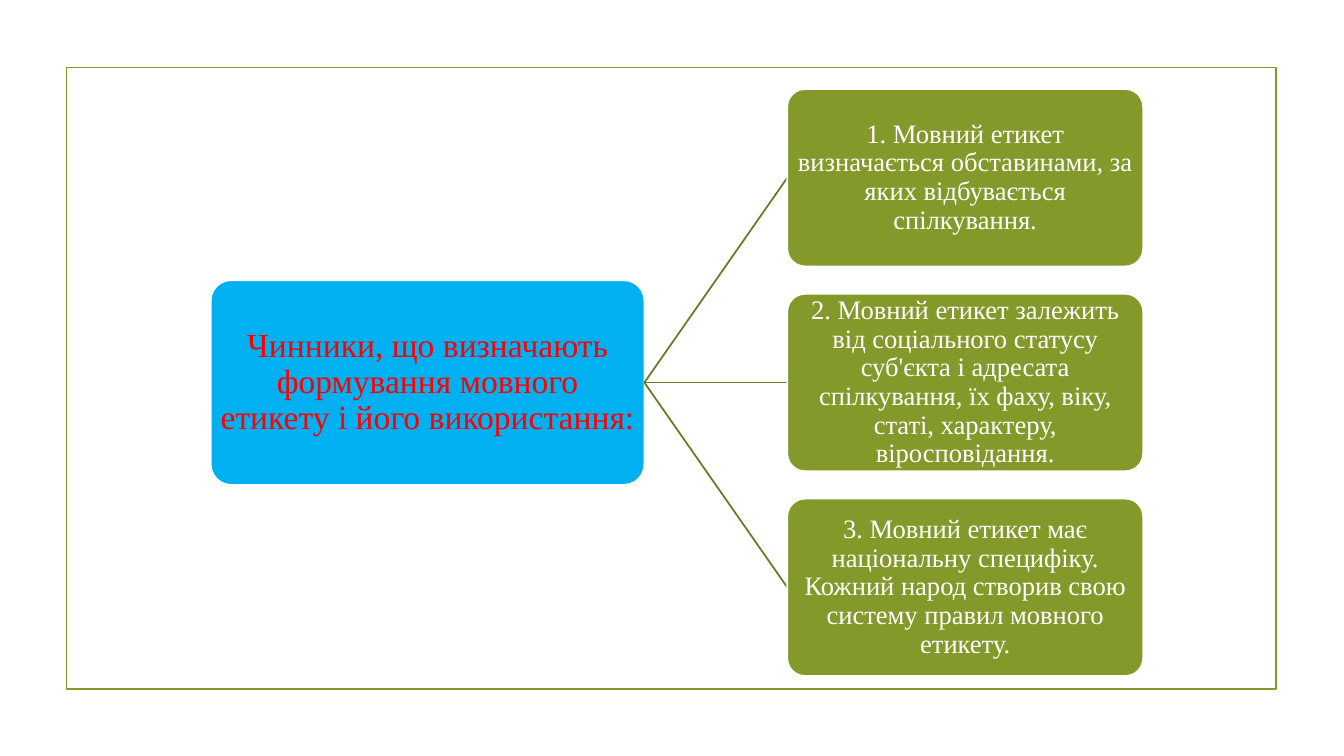
"""Builds a slide with one topic branching into three factors of speech etiquette."""
from lxml.etree import SubElement
from pptx import Presentation
from pptx.dml.color import RGBColor
from pptx.enum.shapes import MSO_CONNECTOR as Connector, MSO_SHAPE as Preset
from pptx.enum.text import MSO_ANCHOR as Anchor, PP_ALIGN as Align
from pptx.oxml.ns import qn
from pptx.util import Cm, Pt

TOPIC = "Чинники, що визначають формування мовного етикету і його використання:"
FACTORS = [
    "1. Мовний етикет визначається обставинами, за яких відбувається спілкування.",
    "2. Мовний етикет залежить від соціального статусу суб'єкта і адресата спілкування, "
    "їх фаху, віку, статі, характеру, віросповідання.",
    "3. Мовний етикет має національну специфіку. Кожний народ створив свою систему "
    "правил мовного етикету.",
]
COLORS = {
    "olive": "83992A",
    "branch": "697B22",
    "blue": "00B0F0",
    "red": "FF0000",
    "white": "FFFFFF",
}
FONT = "Times New Roman"
LINE_WIDTH = Pt(1.25)

FRAME = (1.68, 1.7, 30.48, 15.67)
MIDDLE = 9.64
TOPIC_LEFT, TOPIC_WIDTH, TOPIC_HEIGHT = 5.31, 10.93, 5.16
FACTOR_LEFT, FACTOR_WIDTH, FACTOR_HEIGHT = 19.84, 8.97, 4.47
FACTOR_PITCH = 5.16


def color(name):
    return RGBColor.from_string(COLORS[name])


def style_line(line, name):
    line.color.rgb = color(name)
    line.width = LINE_WIDTH


def add_card(slide, text, left, middle, width, height, fill, ink, size, inset):
    shape = slide.shapes.add_shape(
        Preset.ROUNDED_RECTANGLE, Cm(left), Cm(middle - height / 2), Cm(width), Cm(height)
    )
    shape.adjustments[0] = 0.1
    shape.shadow.inherit = False
    shape.fill.solid()
    shape.fill.fore_color.rgb = color(fill)
    style_line(shape.line, "white")
    frame = shape.text_frame
    frame.word_wrap = True
    frame.vertical_anchor = Anchor.MIDDLE
    frame.margin_left = frame.margin_right = Cm(inset)
    frame.margin_top = frame.margin_bottom = Cm(inset)
    paragraph = frame.paragraphs[0]
    paragraph.text = text
    paragraph.alignment = Align.CENTER
    paragraph.line_spacing = 0.9
    paragraph.font.name = FONT
    paragraph.font.size = Pt(size)
    paragraph.font.color.rgb = color(ink)


def add_branch(slide, middle):
    branch = slide.shapes.add_connector(
        Connector.STRAIGHT,
        Cm(TOPIC_LEFT + TOPIC_WIDTH), Cm(MIDDLE), Cm(FACTOR_LEFT), Cm(middle),
    )
    style_line(branch.line, "branch")
    SubElement(branch.element.spPr, qn("a:effectLst"))


def main():
    presentation = Presentation()
    presentation.slide_width, presentation.slide_height = Cm(33.87), Cm(19.05)
    slide = presentation.slides.add_slide(presentation.slide_layouts[6])

    border = slide.shapes.add_shape(Preset.RECTANGLE, *map(Cm, FRAME))
    border.shadow.inherit = False
    border.fill.background()
    style_line(border.line, "olive")

    add_card(slide, TOPIC, TOPIC_LEFT, MIDDLE, TOPIC_WIDTH, TOPIC_HEIGHT,
             "blue", "red", 24, 0.05)
    for index, factor in enumerate(FACTORS):
        middle = MIDDLE + (index - (len(FACTORS) - 1) / 2) * FACTOR_PITCH
        add_branch(slide, middle)
        add_card(slide, factor, FACTOR_LEFT, middle, FACTOR_WIDTH, FACTOR_HEIGHT,
                 "olive", "white", 19, 0.03)

    presentation.save("out.pptx")


if __name__ == "__main__":
    main()
